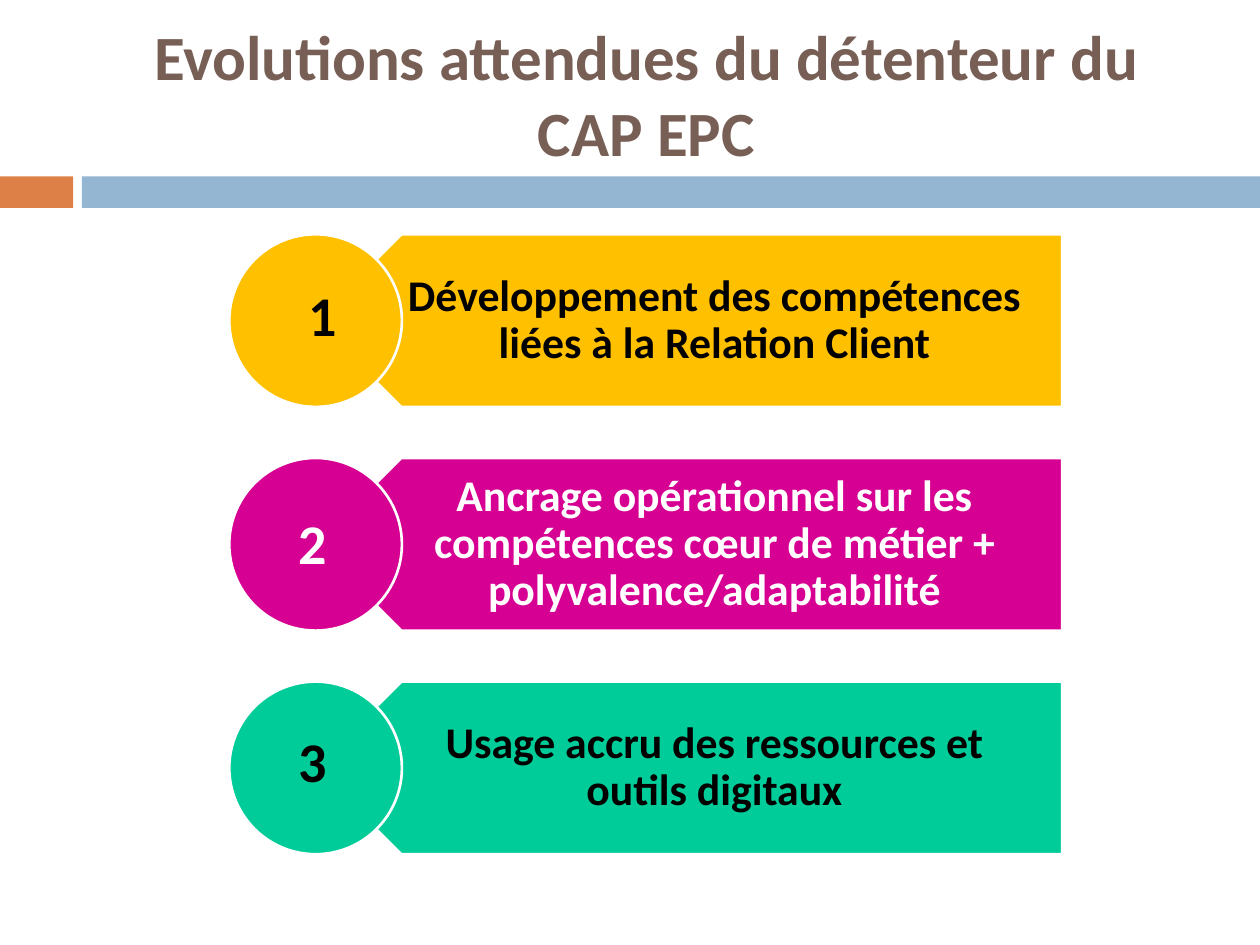
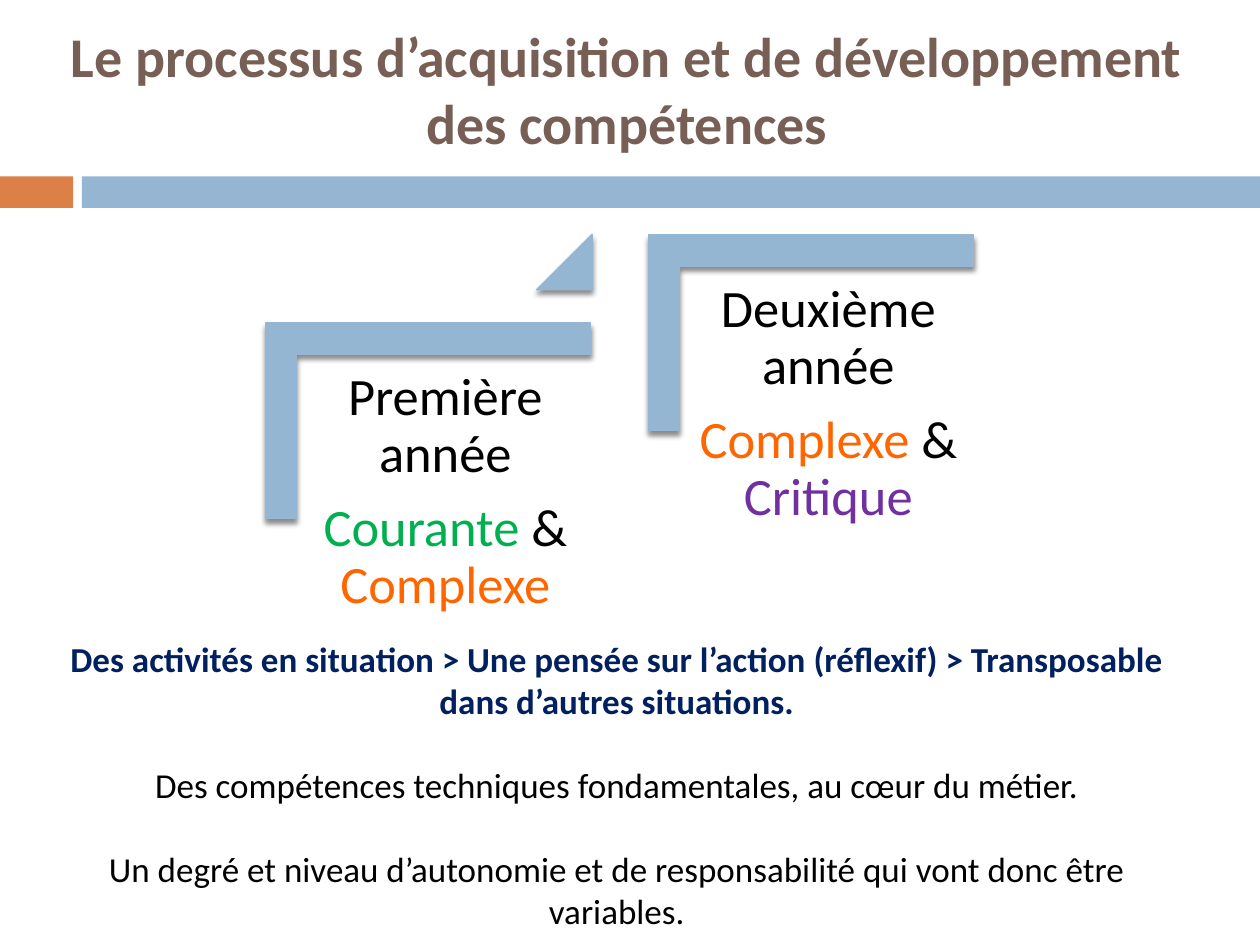
"""Build two slides on the skills expected in a vocational course."""
import pptx
import pptx.util
import pptx.dml.color
import pptx.enum.shapes
import pptx.enum.text
import pptx.oxml

Pt = pptx.util.Pt
Shape = pptx.enum.shapes.MSO_SHAPE
Anchor = pptx.enum.text.MSO_ANCHOR
COLS, ROWS = 100, 75
FONT = "Calibri"
HUES = {
    "brown": "775F55", "rust": "DD8047", "blue": "94B6D2", "navy": "002060",
    "gold": "FFC000", "pink": "D60093", "mint": "00CC99", "black": "000000",
    "white": "FFFFFF", "green": "00B050", "orange": "FF6600", "purple": "7030A0",
}
SHADE = (
    '<a:effectLst xmlns:a="http://schemas.openxmlformats.org/drawingml/2006/main">'
    '<a:outerShdw blurRad="38100" dist="30480" dir="5400000" rotWithShape="0">'
    '<a:srgbClr val="000000"><a:alpha val="45000"/></a:srgbClr>'
    '</a:outerShdw></a:effectLst>'
)


def tint(name):
    return pptx.dml.color.RGBColor.from_string(HUES[name])


def write(frame, paras, size=20, bold=False, hue="black", line=None, after=0, before=0):
    for i, runs in enumerate(paras):
        para = frame.paragraphs[0] if i == 0 else frame.add_paragraph()
        para.alignment = pptx.enum.text.PP_ALIGN.CENTER
        para.line_spacing = line
        para.space_after = Pt(after)
        para.space_before = Pt(before if i else 0)
        for part in [runs] if isinstance(runs, str) else runs:
            words, look = (part, {}) if isinstance(part, str) else part
            run = para.add_run()
            run.text = words
            run.font.name = FONT
            run.font.size = Pt(size)
            run.font.bold = look.get("bold", bold)
            run.font.color.rgb = tint(look.get("hue", hue))


class Deck:
    def __init__(self):
        self.show = pptx.Presentation()
        self.show.slide_width = pptx.util.Inches(10)
        self.show.slide_height = pptx.util.Inches(7.5)
        self.page = None

    def place(self, x, y, w, h):
        col = self.show.slide_width / COLS
        row = self.show.slide_height / ROWS
        return [round(n) for n in (x * col, y * row, w * col, h * row)]

    def start(self, title, spot, size):
        self.page = self.show.slides.add_slide(self.show.slide_layouts[6])
        self.shape(Shape.RECTANGLE, (0, 14, 5.8, 2.5), "rust")
        self.shape(Shape.RECTANGLE, (6.5, 14, 93.5, 2.5), "blue")
        self.text(spot, [title], anchor=Anchor.MIDDLE, size=size, bold=True, hue="brown")

    def shape(self, kind, spot, fill, edge=None, width=1.5, turn=0, adjust=(), shade=False):
        item = self.page.shapes.add_shape(kind, *self.place(*spot))
        item.rotation = turn
        item.fill.solid()
        item.fill.fore_color.rgb = tint(fill)
        if edge:
            item.line.color.rgb = tint(edge)
            item.line.width = Pt(width)
        else:
            item.line.fill.background()
        for i, value in enumerate(adjust):
            item.adjustments[i] = value
        if shade:
            item.element.spPr.append(pptx.oxml.parse_xml(SHADE))
        else:
            item.shadow.inherit = False

    def text(self, spot, paras, anchor=Anchor.TOP, pads=(1, 0.5, 1, 0.5), **look):
        frame = self.page.shapes.add_textbox(*self.place(*spot)).text_frame
        frame.word_wrap = True
        frame.vertical_anchor = anchor
        (frame.margin_left, frame.margin_top,
         frame.margin_right, frame.margin_bottom) = self.place(*pads)
        write(frame, paras, **look)

    def banner(self, y, mark, words, fill, ink, shift):
        high = 13.7
        spot = (25, y, 59.3, high)
        self.shape(Shape.PENTAGON, spot, fill, "white", turn=180)
        self.text(spot, [words], Anchor.MIDDLE, (6, 1, 1.9, 1),
                  size=25, bold=True, hue=ink, line=0.9)
        self.shape(Shape.OVAL, (18.2, y, high, high), fill, "white")
        right, down = shift
        self.text((22 + right, y + 3.2 + down, 6, 6.4), [mark],
                  size=32, bold=True, hue=ink)

    def step(self, x, y, paras):
        self.shape(Shape.CORNER, (x, y, 15.5, 25.8), "blue", "blue", 0.79,
                   turn=90, adjust=(0.161, 0.161), shade=True)
        self.text((x - 3.5, y + 7.7, 25.3, 20.4), paras, pads=(1.2,) * 4,
                  size=30, line=0.9, after=10)


def goals(deck):
    deck.start("Evolutions attendues du détenteur du CAP EPC", (6.7, 2.5, 89.2, 9.8), 36)
    items = [
        ("Développement des compétences liées à la Relation Client",
         "gold", "black", (0.6, 0)),
        ("Ancrage opérationnel sur les compétences cœur de métier + "
         "polyvalence/adaptabilité", "pink", "white", (-0.2, 0.3)),
        ("Usage accru des ressources et outils digitaux",
         "mint", "black", (-0.2, -0.1)),
    ]
    for i, item in enumerate(items):
        deck.banner(18.6 + 17.75 * i, str(i + 1), *item)


def stages(deck):
    deck.start("Le processus d’acquisition et de développement des compétences",
               (4.3, 0, 90.9, 14.1), 32)
    years = [
        ("Première année", ("Courante", "green"), ("Complexe", "orange")),
        ("Deuxième année", ("Complexe", "orange"), ("Critique", "purple")),
    ]
    for i, (year, first, last) in enumerate(years):
        pair = [(first[0], {"hue": first[1]}), " & ", (last[0], {"hue": last[1]})]
        deck.step(26.2 + 30.4 * i, 20.5 - 7 * i, [year, pair])
    deck.shape(Shape.ISOSCELES_TRIANGLE, (42.6, 18.6, 4.4, 4.4), "blue", "blue", 0.79,
               adjust=(1,), shade=True)
    deck.text((3.5, 50.1, 90.9, 24.5), [
        [("Des activités en situation > Une pensée sur l’action (réflexif) > "
          "Transposable dans d’autres situations.", {"bold": True, "hue": "navy"})],
        "Des compétences techniques fondamentales, au cœur du métier.",
        "Un degré et niveau d’autonomie et de responsabilité qui vont donc être variables.",
    ], before=24)


def main():
    deck = Deck()
    goals(deck)
    stages(deck)
    deck.show.save("out.pptx")


if __name__ == "__main__":
    main()
